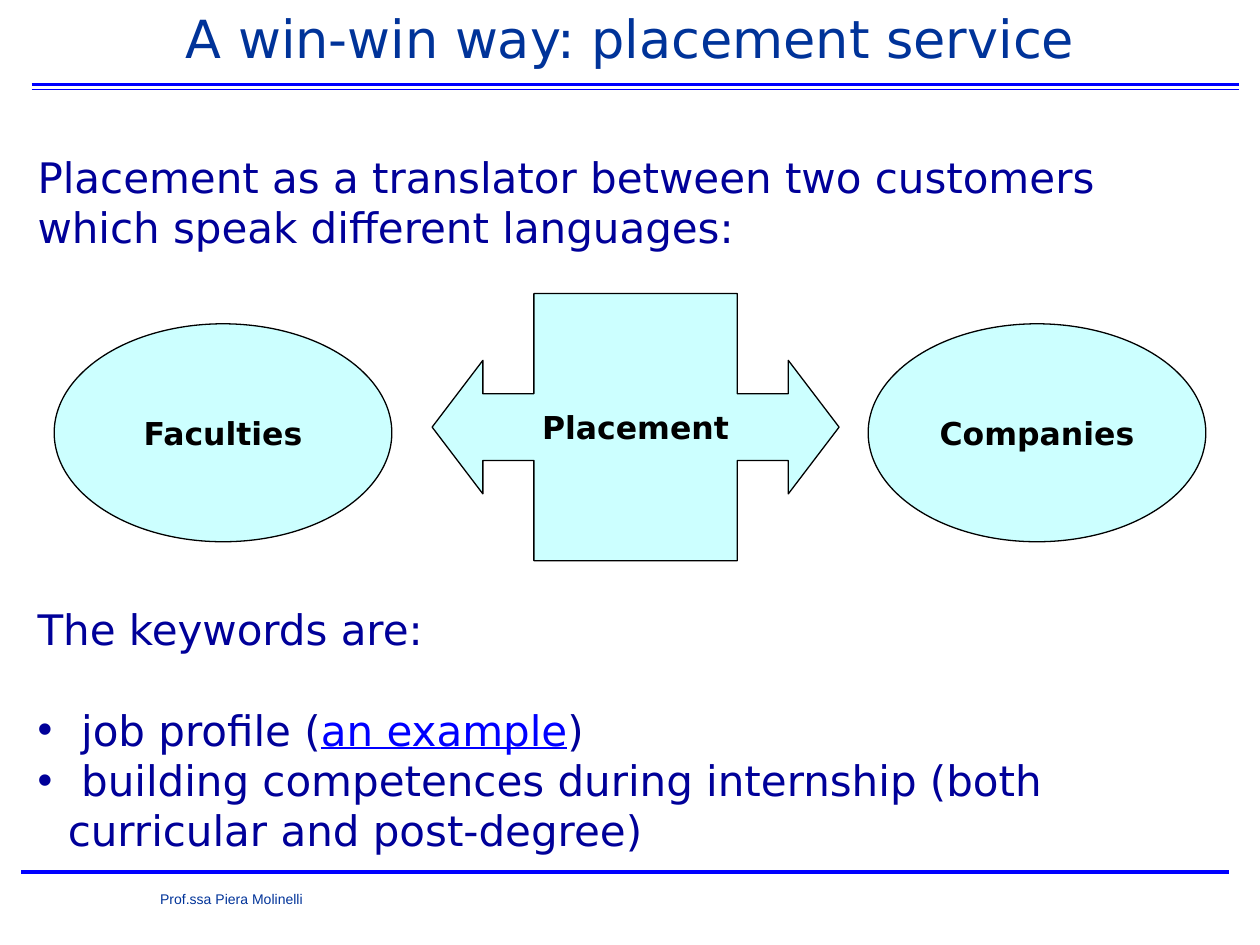
import pptx
import pptx.util
import pptx.dml.color
import pptx.enum.shapes
import pptx.enum.text
import pptx.oxml.ns
import lxml.etree

Pt = pptx.util.Pt
Shape = pptx.enum.shapes.MSO_SHAPE
Align = pptx.enum.text.PP_ALIGN
Anchor = pptx.enum.text.MSO_ANCHOR
qn = pptx.oxml.ns.qn
colour = pptx.dml.color.RGBColor.from_string

deck = pptx.Presentation()
deck.slide_width, deck.slide_height = pptx.util.Inches(10), pptx.util.Inches(7.5)
COLUMN, ROW = deck.slide_width // 100, deck.slide_height // 75


def cells(left, top, right, bottom):
    """Turn columns and rows of the 100 by 75 grid into lengths."""
    return [int(left * COLUMN), int(top * ROW), int(right * COLUMN), int(bottom * ROW)]


def write(para, text, size=24, font="DejaVu Sans", ink="000099", bold=False,
          underline=False, align=Align.LEFT):
    para.alignment = align
    span = para.add_run()
    span.text = text
    span.font.size, span.font.name = Pt(size), font
    span.font.bold, span.font.underline = bold, underline
    span.font.color.rgb = colour(ink)


page = deck.slides.add_slide(deck.slide_layouts[5])

# Rules at the head and foot
for left, height, weight in [(2.5, 6.7, 2), (2.5, 7.1, 1), (1.7, 69.2, 2)]:
    rule = page.shapes.add_connector(pptx.enum.shapes.MSO_CONNECTOR.STRAIGHT,
                                     *cells(left, height, left + 95.8, height))
    rule.line.color.rgb = colour("0000FF")
    rule.line.width = Pt(weight)
    lxml.etree.SubElement(rule._element.spPr, qn("a:effectLst"))

# Title
title = page.shapes.title
title.left, title.top, title.width, title.height = cells(0.5, -0.8, 97.5, 7.6)
frame = title.text_frame
frame.word_wrap = True
frame.auto_size = pptx.enum.text.MSO_AUTO_SIZE.NONE
frame.vertical_anchor = Anchor.MIDDLE
frame.margin_left, frame.margin_right = int(1.6 * COLUMN), 0
write(frame.paragraphs[0], "A win-win way: placement service", size=30,
      ink="003399", align=Align.CENTER)

# Author in the footer
footer = page.shapes.add_textbox(*cells(2.8, 70.2, 29.1, 4.8))
footer.text_frame.word_wrap = True
footer.text_frame.margin_left = int(9.9 * COLUMN)
write(footer.text_frame.paragraphs[0], "Prof.ssa Piera Molinelli", size=8,
      font="Arial", ink="003399")

# Body: the gaps leave whole lines free for the diagram
LINE = 28.7
body = page.shapes.add_textbox(*cells(2, 11.5, 88.6, 61.6)).text_frame
body.word_wrap = True
write(body.paragraphs[0], "Placement as a translator between two customers "
      "which speak different languages:")
keywords = body.add_paragraph()
keywords.space_before = Pt(7 * LINE)
write(keywords, "The keywords are:")

bullets = [
    (1, [(" job profile (", {}), ("an example", {"ink": "0000FF", "underline": True}),
         (")", {})]),
    (0, [(" building competences during internship (both curricular and post-degree)",
          {})]),
]
for free_lines, parts in bullets:
    para = body.add_paragraph()
    para.space_before = Pt(free_lines * LINE)
    settings = para._p.get_or_add_pPr()
    indent = int(2.4 * COLUMN)
    settings.set("marL", str(indent))
    settings.set("indent", str(-indent))
    lxml.etree.SubElement(settings, qn("a:buFont")).set("typeface", "Arial")
    lxml.etree.SubElement(settings, qn("a:buChar")).set("char", "•")
    for text, style in parts:
        write(para, text, **style)

# Diagram: placement between its two customers
figures = [
    ("Placement", Shape.LEFT_RIGHT_ARROW_CALLOUT, (34.3, 23.3, 32.3, 21.2)),
    ("Faculties", Shape.OVAL, (4.3, 25.7, 26.8, 17.3)),
    ("Companies", Shape.OVAL, (68.9, 25.7, 26.8, 17.3)),
]
for label, kind, area in figures:
    figure = page.shapes.add_shape(kind, *cells(*area))
    if kind == Shape.LEFT_RIGHT_ARROW_CALLOUT:
        for number, share in enumerate([0.25, 0.25, 0.19, 0.5]):
            figure.adjustments[number] = share
    figure.shadow.inherit = False
    figure.fill.solid()
    figure.fill.fore_color.rgb = colour("CCFFFF")
    figure.line.color.rgb = colour("000000")
    figure.line.width = Pt(0.75)
    figure.text_frame.word_wrap = False
    figure.text_frame.vertical_anchor = Anchor.MIDDLE
    write(figure.text_frame.paragraphs[0], label, size=18, ink="000000", bold=True,
          align=Align.CENTER)

deck.save("out.pptx")
